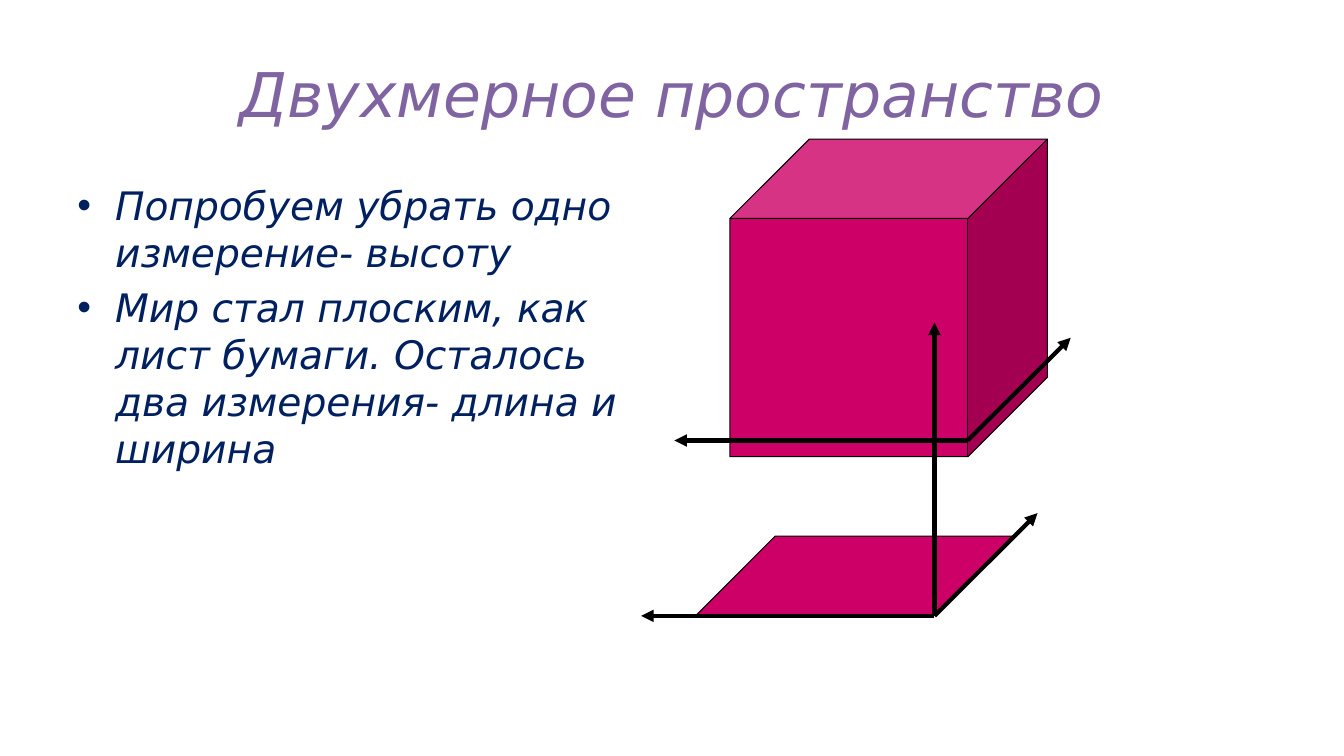
from lxml import etree
from pptx import Presentation
from pptx import util as u
from pptx.dml.color import RGBColor
from pptx.enum import shapes, text
from pptx.oxml.ns import qn

deck = Presentation()
deck.slide_width, deck.slide_height = u.Inches(13.33), u.Inches(7.5)
page = deck.slides.add_slide(deck.slide_layouts[1])


def color(value):
    return RGBColor.from_string(value)


def place(x, y):
    """Turn percent shares of the slide into lengths."""
    return int(deck.slide_width * x / 100), int(deck.slide_height * y / 100)


# Title and list
title, body = page.placeholders
texts = [
    (title, (5, 4), (90, 16.67), 44, "8064A2", ["Двухмерное пространство"]),
    (body, (5, 23.33), (44.17, 66), 28, "002060", [
        "Попробуем убрать одно измерение- высоту",
        "Мир стал плоским, как лист бумаги. Осталось два измерения- длина и ширина",
    ]),
]
for box, corner, size, points, ink, lines in texts:
    box.left, box.top = place(*corner)
    box.width, box.height = place(*size)
    box.text_frame.text = "\n".join(lines)
    box.text_frame.auto_size = text.MSO_AUTO_SIZE.NONE
    for para in box.text_frame.paragraphs:
        span = para.runs[0]
        span.font.color.rgb = color(ink)
        look = {"name": "DejaVu Sans", "size": u.Pt(points), "italic": True}
        for key, value in look.items():
            setattr(span.font, key, value)

# Flat sheet, then the cube in a group with its own axes
kinds = shapes.MSO_SHAPE
group = page.shapes.add_group_shape()
sheet = page.shapes.add_shape(
    kinds.PARALLELOGRAM, *place(51.75, 70.93), *place(23.63, 10.53))
page.shapes._spTree.remove(sheet._element)
group._element.addprevious(sheet._element)
cube = group.shapes.add_shape(kinds.CUBE, *place(54.3, 18.4), *place(23.63, 42))
for solid, slant in [(sheet, 0.999), (cube, 0.25)]:
    solid.adjustments[0] = slant
    solid.shadow.inherit = False
    solid.fill.solid()
    solid.fill.fore_color.rgb = color("CC0066")
    solid.line.color.rgb = color("000000")
    solid.line.width = u.Pt(0.75)

# Axes: each runs from its origin by a share of the slide
height, width, length = (0, -38.8), (7.67, -13.6), (-21.83, 0)
axes = [
    (group, (72, 58.27), [width, length]),
    (page, (69.53, 81.47), [height, width, length]),
]
for owner, (x, y), reaches in axes:
    for across, down in reaches:
        axis = owner.shapes.add_connector(
            shapes.MSO_CONNECTOR.STRAIGHT, *place(x, y), *place(x + across, y + down))
        axis.line.color.rgb = color("000000")
        axis.line.width = u.Pt(3)
        etree.SubElement(axis.line._get_or_add_ln(), qn("a:tailEnd"), type="triangle")
        etree.SubElement(axis._element.spPr, qn("a:effectLst"))

deck.save("out.pptx")
